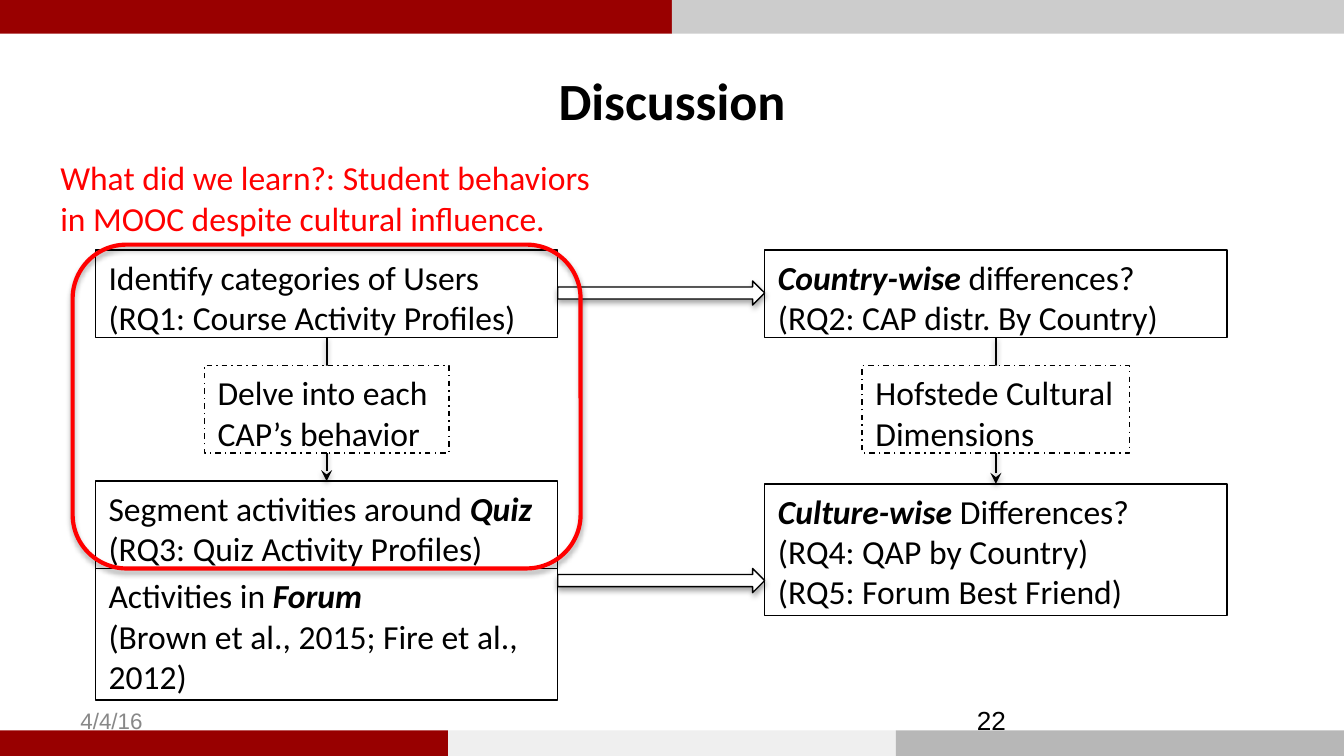
from dataclasses import dataclass
from lxml.etree import SubElement
from pptx import Presentation
from pptx.dml.color import RGBColor
from pptx.enum.dml import MSO_LINE
from pptx.enum.shapes import MSO_CONNECTOR, MSO_SHAPE
from pptx.enum.text import MSO_ANCHOR, MSO_AUTO_SIZE, PP_ALIGN
from pptx.oxml.ns import qn
from pptx.util import Inches, Pt


@dataclass(frozen=True)
class Theme:
    font: str = "Calibri"
    foot: str = "Arial"
    ink: str = "000000"
    paper: str = "FFFFFF"
    alert: str = "FF0000"
    muted: str = "888888"
    top: tuple = ("990000", "CCCCCC")
    base: tuple = ("980000", "EFEFEF", "B7B7B7")
    title: int = 28
    body: int = 18
    date: int = 12
    page: int = 14


@dataclass(frozen=True)
class Box:
    x: float
    y: float
    w: float
    h: float

    def inner(self, x, y, w, h):
        return Box(self.x + x, self.y + y, w, h)

    def emu(self):
        return [Inches(n * UNIT) for n in (self.x, self.y, self.w, self.h)]


THEME = Theme()
UNIT = 0.1
COLS, ROWS = 100, 56.25


def color(code):
    return RGBColor.from_string(code)


def write(frame, text, size, ink=THEME.ink, font=THEME.font, align=PP_ALIGN.LEFT,
          anchor=MSO_ANCHOR.TOP, bold=False):
    frame.word_wrap = True
    frame.auto_size = MSO_AUTO_SIZE.NONE
    frame.vertical_anchor = anchor
    for n, line in enumerate(text.split("\n")):
        para = frame.add_paragraph() if n else frame.paragraphs[0]
        para.alignment = align
        para.font.name, para.font.size = font, Pt(size)
        para.font.color.rgb = color(ink)
        para.font.bold = bold
        for k, piece in enumerate(line.split("*")):
            if piece:
                run = para.add_run()
                run.text = piece
                if k % 2:
                    run.font.bold = run.font.italic = True


def shade(props, alpha, dist):
    effects = props.find(qn("a:effectLst"))
    if effects is None:
        effects = SubElement(props, qn("a:effectLst"))
    outer = SubElement(effects, qn("a:outerShdw"), blurRad=str(Pt(3.1)),
                       dist=str(Pt(dist)), dir="5400000", rotWithShape="0")
    tint = SubElement(outer, qn("a:srgbClr"), val=THEME.ink)
    SubElement(tint, qn("a:alpha"), val=str(alpha * 1000))


def shape(slide, kind, box, fill=None, line=None, width=0.75):
    item = slide.shapes.add_shape(kind, *box.emu())
    item.shadow.inherit = False
    if fill:
        item.fill.solid()
        item.fill.fore_color.rgb = color(fill)
    else:
        item.fill.background()
    if line:
        item.line.color.rgb = color(line)
        item.line.width = Pt(width)
    else:
        item.line.fill.background()
    return item


def card(slide, box, text, fill=None):
    item = shape(slide, MSO_SHAPE.RECTANGLE, box, fill, THEME.ink)
    write(item.text_frame, text, THEME.body)
    return item


def label(slide, box, text, size, **style):
    write(slide.shapes.add_textbox(*box.emu()).text_frame, text, size, **style)


def band(slide, box, fills):
    step = box.w / len(fills)
    for n, fill in enumerate(fills):
        shape(slide, MSO_SHAPE.RECTANGLE, box.inner(n * step, 0, step, box.h), fill)


def arrow(slide, box):
    item = shape(slide, MSO_SHAPE.RIGHT_ARROW, box, THEME.paper, THEME.ink)
    shade(item.element.spPr, 35, 1.8)


def link(slide, start, end):
    line = slide.shapes.add_connector(MSO_CONNECTOR.STRAIGHT, 0, 0, 0, 0)
    line.begin_connect(start, 2)
    line.end_connect(end, 0)
    line.line.color.rgb = color(THEME.ink)
    line.line.width = Pt(1)
    props = line.element.spPr
    SubElement(props.find(qn("a:ln")), qn("a:tailEnd"), type="stealth")
    shade(props, 38, 1.6)


def track(slide, box, first, note, last, wide, drop, tall):
    start = card(slide, box.inner(0, 0, box.w, 6.5), first)
    end = card(slide, box.inner(0, drop, box.w, tall), last)
    link(slide, start, end)
    middle = box.inner((box.w - wide) / 2, 8.6, wide, 6.5)
    card(slide, middle, note, THEME.paper).line.dash_style = MSO_LINE.DASH_DOT


def flow(slide, box):
    wide, tall = 34.4, 9.8
    gap = box.w - 2 * wide
    left = box.inner(0, 0, wide, box.h)
    right = box.inner(wide + gap, 0, wide, box.h)
    card(slide, left.inner(0, box.h - tall, wide, tall),
         "Activities in *Forum*\n(Brown et al., 2015; Fire et al., 2012)")
    for y in (2.3, 23.7):
        arrow(slide, box.inner(wide, y, gap, 1.8))
    track(slide, left,
          "Identify categories of Users\n(RQ1: Course Activity Profiles)",
          "Delve into each CAP’s behavior",
          "Segment activities around *Quiz*\n(RQ3: Quiz Activity Profiles)",
          18.2, 17.2, 6.5)
    track(slide, right,
          "*Country-wise *differences? (RQ2: CAP distr. By Country)",
          "Hofstede Cultural Dimensions",
          "*Culture-wise *Differences?\n(RQ4: QAP by Country)\n(RQ5: Forum Best Friend)",
          19.9, 17.4, tall)
    ring = shape(slide, MSO_SHAPE.ROUNDED_RECTANGLE, box.inner(-1.7, -0.4, 37.8, 24.1),
                 line=THEME.alert, width=2.25)
    shade(ring.element.spPr, 35, 1.8)


def head(slide, box):
    title = slide.shapes.title
    title.left, title.top, title.width, title.height = box.emu()
    write(title.text_frame, "Discussion", THEME.title, align=PP_ALIGN.CENTER,
          anchor=MSO_ANCHOR.MIDDLE, bold=True)


def foot(slide, box):
    wide = 23.3
    style = dict(font=THEME.foot, anchor=MSO_ANCHOR.MIDDLE)
    label(slide, box.inner(0, 0, wide, box.h), "4/4/16", THEME.date,
          ink=THEME.muted, **style)
    label(slide, box.inner(box.w - wide, 0, wide, box.h), "22", THEME.page, **style)


def main():
    deck = Presentation()
    deck.slide_width, deck.slide_height = Inches(COLS * UNIT), Inches(ROWS * UNIT)
    slide = deck.slides.add_slide(deck.slide_layouts[5])
    band(slide, Box(0, 0, COLS, 2.5), THEME.top)
    band(slide, Box(0, ROWS - 1.9, COLS, 1.9), THEME.base)
    head(slide, Box(5, 3, 90, 8.8))
    flow(slide, Box(7.1, 18.6, 84.2, 33.5))
    label(slide, Box(3.5, 11.2, 43.2, 5.3),
          "What did we learn?: Student behaviors in MOOC despite cultural influence.",
          THEME.body, ink=THEME.alert)
    foot(slide, Box(5, 52.1, 90, 3))
    deck.save("out.pptx")


if __name__ == "__main__":
    main()
